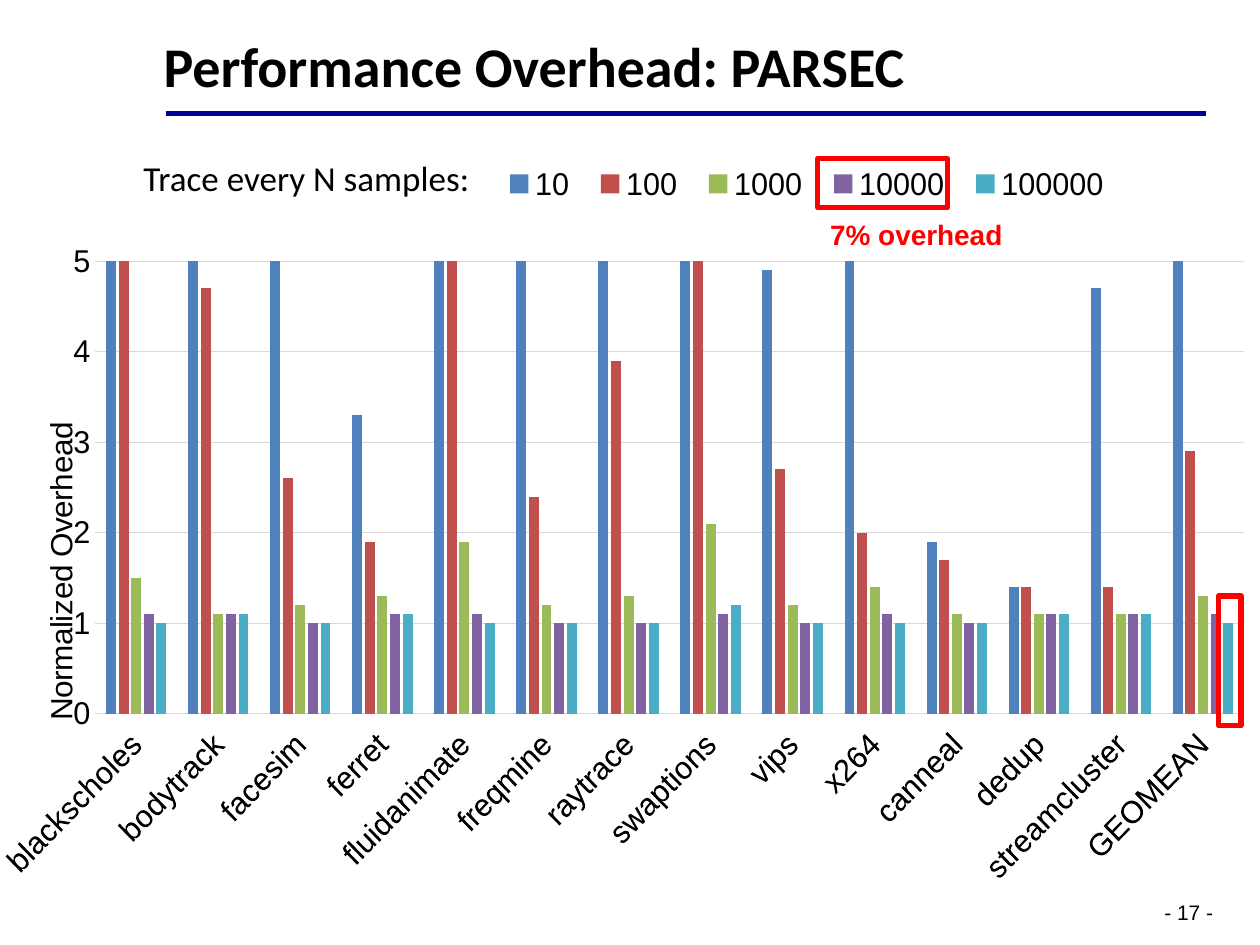
from lxml import etree
from pptx import Presentation
from pptx import util as u
from pptx.chart.data import CategoryChartData
from pptx.dml.color import RGBColor
from pptx.enum import chart as charts, shapes, text
from pptx.oxml import ns

BLACK = RGBColor(0, 0, 0)
NAVY = RGBColor(0, 0, 0x99)
RED = RGBColor(0xFF, 0, 0)
GRID = RGBColor(0xD9, 0xD9, 0xD9)

BENCHMARKS = ["blackscholes", "bodytrack", "facesim", "ferret", "fluidanimate",
              "freqmine", "raytrace", "swaptions", "vips", "x264", "canneal",
              "dedup", "streamcluster", "GEOMEAN"]
# Sampling interval, bar colour, overhead per benchmark
SERIES = [
    ("10", RGBColor(0x4F, 0x81, 0xBD),
     [19.9, 7.8, 16.1, 3.3, 25.1, 6.5, 24.7, 7.6, 4.9, 16, 1.9, 1.4, 4.7, 7.5]),
    ("100", RGBColor(0xC0, 0x50, 0x4D),
     [5.5, 4.7, 2.6, 1.9, 7.1, 2.4, 3.9, 5.4, 2.7, 2, 1.7, 1.4, 1.4, 2.9]),
    ("1000", RGBColor(0x9B, 0xBB, 0x59),
     [1.5, 1.1, 1.2, 1.3, 1.9, 1.2, 1.3, 2.1, 1.2, 1.4, 1.1, 1.1, 1.1, 1.3]),
    ("10000", RGBColor(0x80, 0x64, 0xA2),
     [1.1, 1.1, 1, 1.1, 1.1, 1, 1, 1.1, 1, 1.1, 1, 1.1, 1.1, 1.1]),
    ("100000", RGBColor(0x4B, 0xAC, 0xC6),
     [1, 1.1, 1, 1.1, 1, 1, 1, 1.2, 1, 1, 1, 1.1, 1.1, 1]),
]


def inches(*lengths):
    return [u.Inches(length) for length in lengths]


def style_font(font, size, name="Arial", color=BLACK, bold=False):
    font.size, font.name, font.bold = u.Pt(size), name, bold
    font.color.rgb = color


def add_label(page, box, words, size, name="Arial", color=BLACK, bold=False,
              spacing=0.8, wrap=False, anchor=text.MSO_ANCHOR.TOP,
              margins=(0.1, 0.05)):
    frame = page.shapes.add_textbox(*inches(*box)).text_frame
    frame.word_wrap, frame.vertical_anchor = wrap, anchor
    frame.margin_left = frame.margin_right = u.Inches(margins[0])
    frame.margin_top = frame.margin_bottom = u.Inches(margins[1])
    para = frame.paragraphs[0]
    para.line_spacing = spacing
    span = para.add_run()
    span.text = words
    style_font(span.font, size, name, color, bold)


def add_highlight(page, box):
    frame = page.shapes.add_shape(shapes.MSO_SHAPE.RECTANGLE, *inches(*box))
    frame.shadow.inherit = False
    frame.fill.background()
    frame.line.color.rgb, frame.line.width = RED, u.Pt(3)


def place(element, inner=False, **shares):
    """Put a chart part at shares of the chart's size."""
    for old in element.findall(ns.qn("c:layout")):
        element.remove(old)
    layout = etree.Element(ns.qn("c:layout"))
    manual = etree.SubElement(layout, ns.qn("c:manualLayout"))
    settings = [("layoutTarget", "inner")] if inner else []
    settings += [("xMode", "edge"), ("yMode", "edge"), *shares.items()]
    for tag, value in settings:
        etree.SubElement(manual, ns.qn("c:" + tag)).set("val", str(value))
    before = [child for child in element
              if etree.QName(child).localname in ("tx", "legendPos")]
    element.insert(element.index(before[0]) + 1 if before else 0, layout)


def add_header(page, box):
    left, top, width, height = box
    add_label(page, box, "Performance Overhead: PARSEC", 32, "Calibri",
              bold=True, spacing=0.9, wrap=True, anchor=text.MSO_ANCHOR.BOTTOM)
    rule_top = top + height + 0.06
    rule = page.shapes.add_connector(
        shapes.MSO_CONNECTOR.STRAIGHT,
        *inches(left + 0.12, rule_top, left + width - 0.43, rule_top))
    rule.line.color.rgb, rule.line.width = NAVY, u.Pt(3)
    etree.SubElement(rule._element.spPr, ns.qn("a:effectLst"))


def style_axes(chart):
    for axis in (chart.category_axis, chart.value_axis):
        axis.major_tick_mark = axis.minor_tick_mark = charts.XL_TICK_MARK.NONE
        style_font(axis.tick_labels.font, 18)
    names, values = chart.category_axis, chart.value_axis
    names.tick_label_position = charts.XL_TICK_LABEL_POSITION.LOW
    grid = values.major_gridlines.format.line
    for line in (names.format.line, grid):
        line.color.rgb, line.width = GRID, u.Pt(0.75)
    values.format.line.fill.background()
    values.minimum_scale, values.maximum_scale, values.major_unit = 0, 5, 1
    values.tick_labels.number_format = "General"
    values.tick_labels.number_format_is_linked = False
    # Rotated category names
    names._element.find(ns.qn("c:txPr")).find(ns.qn("a:bodyPr")).set(
        "rot", "-2700000")
    # Value axis title, left of the tick labels
    title = values.axis_title
    span = title.text_frame.paragraphs[0].add_run()
    span.text = "Normalized Overhead"
    style_font(span.font, 18)
    body = title._element.find(".//" + ns.qn("a:bodyPr"))
    body.set("rot", "-5400000")
    body.set("vert", "horz")
    place(title._element, x=-0.01, y=0.32)


def add_overhead_chart(page, box):
    data = CategoryChartData()
    data.categories = BENCHMARKS
    for name, _, overheads in SERIES:
        data.add_series(name, overheads)
    chart = page.shapes.add_chart(charts.XL_CHART_TYPE.COLUMN_CLUSTERED,
                                  *inches(*box), data).chart
    chart.has_title = False
    style_font(chart.font, 10)
    plot = chart.plots[0]
    plot.gap_width, plot.overlap, plot.vary_by_categories = 219, -27, False
    for series, (_, color, _) in zip(plot.series, SERIES):
        series.format.fill.solid()
        series.format.fill.fore_color.rgb = color
        series.invert_if_negative = False
    style_axes(chart)
    chart.has_legend = True
    chart.legend.position = charts.XL_LEGEND_POSITION.BOTTOM
    chart.legend.include_in_layout = False
    style_font(chart.legend.font, 18)
    place(chart.legend._element, x=0.37, y=0, w=0.52, h=0.07)
    place(chart._chartSpace.chart.plotArea, inner=True,
          x=0.049, y=0.133, w=0.938, h=0.574)


def add_callouts(page, box):
    left, top, width, height = box
    add_label(page, (left + 1.04, top + 0.02, 2.81, 0.38),
              "Trace every N samples:", 20, "Calibri")
    # Legend entry and its overhead
    add_highlight(page, (left + 6.49, top + 0.02, 1.03, 0.39))
    add_label(page, (left + 6.49, top + 0.49, 1.59, 0.32), "7% overhead", 16,
              color=RED, bold=True)
    # Mean bar
    add_highlight(page, (left + width - 0.33, top + 3.49, 0.18, 1.03))


def main():
    deck = Presentation()
    deck.slide_width, deck.slide_height = inches(10, 7.5)
    page = deck.slides.add_slide(deck.slide_layouts[6])
    chart_box = (0, 1.24, 10, 6.26)
    add_label(page, (9.19, 7.12, 0.52, 0.24), "- 17 -", 12, spacing=1.0,
              margins=(0.05, 0.02))
    add_header(page, (1.2, 0.14, 8.8, 0.7))
    add_overhead_chart(page, chart_box)
    add_callouts(page, chart_box)
    deck.save("out.pptx")


if __name__ == "__main__":
    main()
